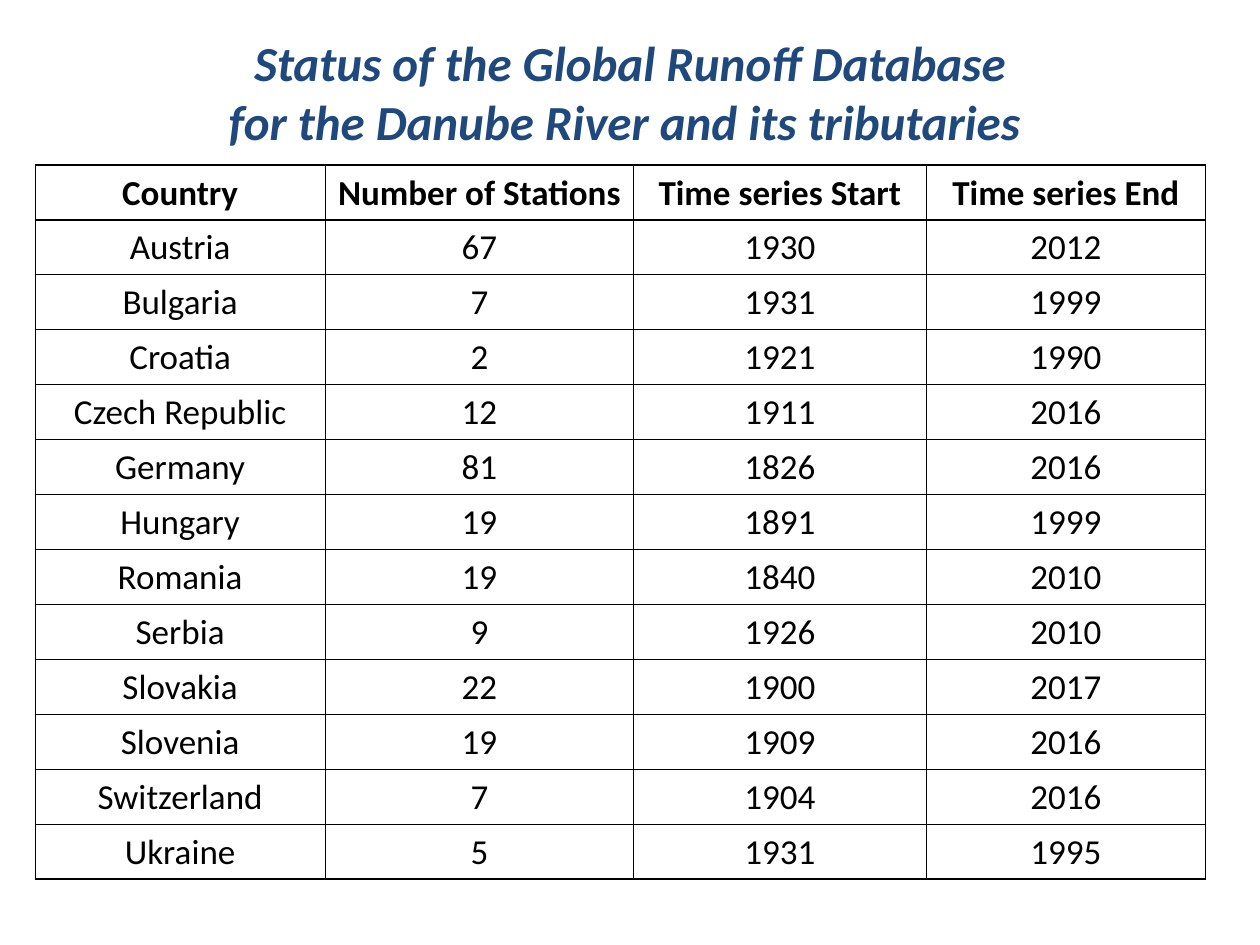
"""Build the slide on runoff records held for the Danube River and its tributaries."""
from dataclasses import dataclass

from lxml.etree import SubElement
from pptx import Presentation
from pptx.dml.color import RGBColor
from pptx.enum.text import MSO_ANCHOR, MSO_AUTO_SIZE, PP_ALIGN
from pptx.oxml.ns import qn
from pptx.util import Inches, Pt

TITLE = ("Status of the Global Runoff Database",
         "for the Danube River and its tributaries ")
HEADER = ("Country", "Number of Stations", "Time series Start", "Time series End")
STATIONS = [
    ("Austria", 67, 1930, 2012),
    ("Bulgaria", 7, 1931, 1999),
    ("Croatia", 2, 1921, 1990),
    ("Czech Republic", 12, 1911, 2016),
    ("Germany", 81, 1826, 2016),
    ("Hungary", 19, 1891, 1999),
    ("Romania", 19, 1840, 2010),
    ("Serbia", 9, 1926, 2010),
    ("Slovakia", 22, 1900, 2017),
    ("Slovenia", 19, 1909, 2016),
    ("Switzerland", 7, 1904, 2016),
    ("Ukraine", 5, 1931, 1995),
]
COLUMN_WIDTHS = (2.3, 2.45, 2.32, 2.22)
TABLE_LEFT, TABLE_TOP, TABLE_HEIGHT = 0.28, 1.31, 5.67


@dataclass(frozen=True)
class Theme:
    font: str = "Calibri"
    title_color: str = "1F497D"
    ink: str = "000000"
    title_size: int = 28
    table_size: int = 20
    outer_line: float = 1
    inner_line: float = 0.5


THEME = Theme()


def style_paragraph(para, size, color, bold, italic=False):
    para.alignment = PP_ALIGN.CENTER
    font = para.font
    font.name, font.size = THEME.font, Pt(size)
    font.bold, font.italic = bold, italic
    font.color.rgb = RGBColor.from_string(color)


def add_title(page, width):
    box = page.shapes.title
    box.left, box.top, box.width, box.height = 0, Inches(0.21), width, Inches(1.04)
    frame = box.text_frame
    frame.text = "\n".join(TITLE)
    frame.word_wrap = True
    frame.auto_size = MSO_AUTO_SIZE.SHAPE_TO_FIT_TEXT
    frame.vertical_anchor = MSO_ANCHOR.TOP
    for para in frame.paragraphs:
        style_paragraph(para, THEME.title_size, THEME.title_color, True, True)


def set_borders(cell, heavy_sides):
    properties = cell._tc.get_or_add_tcPr()
    for index, side in enumerate("LRTB"):
        points = THEME.outer_line if side in heavy_sides else THEME.inner_line
        line = SubElement(properties, qn(f"a:ln{side}"), w=str(Pt(points)))
        fill = SubElement(line, qn("a:solidFill"))
        SubElement(fill, qn("a:srgbClr"), val=THEME.ink)
        properties.insert(index, line)


def heavy_sides(row, column, last_row, last_column):
    edges = {"L": column == 0, "R": column == last_column,
             "T": row <= 1, "B": row in (0, last_row)}
    return [side for side, heavy in edges.items() if heavy]


def add_station_table(page):
    records = [HEADER, *STATIONS]
    last_row, last_column = len(records) - 1, len(HEADER) - 1
    table = page.shapes.add_table(
        len(records), len(HEADER), Inches(TABLE_LEFT), Inches(TABLE_TOP),
        Inches(sum(COLUMN_WIDTHS)), Inches(TABLE_HEIGHT)).table
    table.first_row = table.horz_banding = False
    for column, width in zip(table.columns, COLUMN_WIDTHS):
        column.width = Inches(width)
    for r, record in enumerate(records):
        table.rows[r].height = Inches(TABLE_HEIGHT / len(records))
        for c, value in enumerate(record):
            cell = table.cell(r, c)
            cell.text = str(value)
            cell.vertical_anchor = MSO_ANCHOR.MIDDLE
            cell.margin_left = cell.margin_right = cell.margin_top = Inches(0.01)
            cell.margin_bottom = 0
            cell.fill.background()
            set_borders(cell, heavy_sides(r, c, last_row, last_column))
            style_paragraph(cell.text_frame.paragraphs[0], THEME.table_size,
                            THEME.ink, r == 0)


def main():
    deck = Presentation()
    deck.slide_width, deck.slide_height = Inches(10), Inches(7.5)
    page = deck.slides.add_slide(deck.slide_layouts.get_by_name("Title Only"))
    add_title(page, deck.slide_width)
    add_station_table(page)
    deck.save("out.pptx")


if __name__ == "__main__":
    main()
